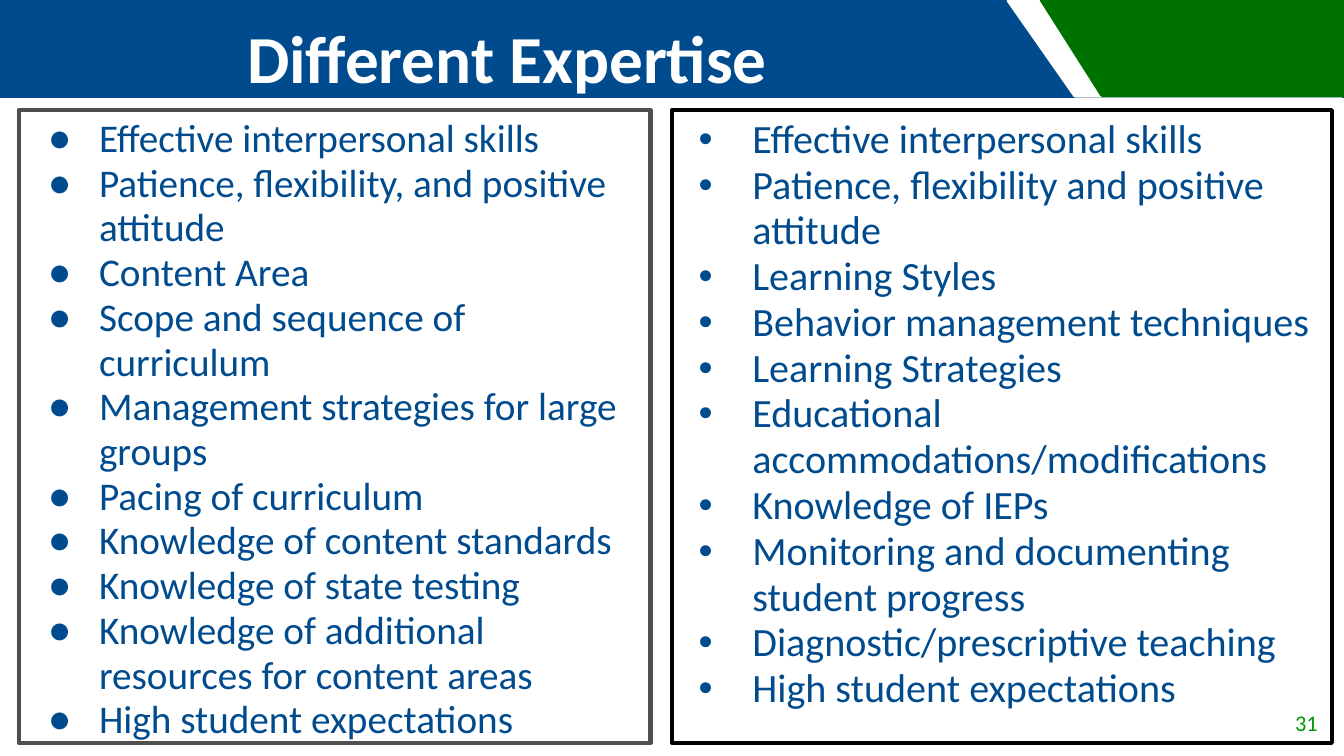
from lxml import etree
from pptx import Presentation
from pptx.dml.color import RGBColor
from pptx.enum.shapes import MSO_SHAPE
from pptx.enum.text import MSO_ANCHOR, MSO_AUTO_SIZE, PP_ALIGN
from pptx.oxml.ns import qn
from pptx.util import Pt

RECTANGLE = MSO_SHAPE.RECTANGLE
SLANTED = MSO_SHAPE.FLOWCHART_MANUAL_INPUT
TOP, MIDDLE = MSO_ANCHOR.TOP, MSO_ANCHOR.MIDDLE
LEFT, CENTER, RIGHT = PP_ALIGN.LEFT, PP_ALIGN.CENTER, PP_ALIGN.RIGHT
NO_AUTOFIT = MSO_AUTO_SIZE.NONE

FONT = "Calibri"
BLUE, GREEN, WHITE = "004B8D", "007200", "FFFFFF"
TITLE_ONLY = 5
PANEL_TOP, PANEL_HEIGHT = 59, 339
TEXT_INDENT = 36

GENERAL_EDUCATOR = [
    "Effective interpersonal skills",
    "Patience, flexibility, and positive attitude",
    "Content Area",
    "Scope and sequence of curriculum",
    "Management strategies for large groups",
    "Pacing of curriculum",
    "Knowledge of content standards",
    "Knowledge of state testing",
    "Knowledge of additional resources for content areas",
    "High student expectations",
]
SPECIAL_EDUCATOR = [
    "Effective interpersonal skills",
    "Patience, flexibility and positive attitude",
    "Learning Styles",
    "Behavior management techniques",
    "Learning Strategies",
    "Educational accommodations/modifications",
    "Knowledge of IEPs",
    "Monitoring and documenting student progress",
    "Diagnostic/prescriptive teaching",
    "High student expectations",
]


def color(hex_value):
    return RGBColor.from_string(hex_value)


def style_frame(frame, anchor):
    frame.word_wrap = True
    frame.auto_size = NO_AUTOFIT
    frame.vertical_anchor = anchor
    frame.margin_left = frame.margin_right = Pt(7.2)
    frame.margin_top = frame.margin_bottom = Pt(3.6)


def style_paragraph(para, size, hex_value, align, bold=False):
    para.alignment = align
    for span in para.runs:
        span.font.name = FONT
        span.font.size = Pt(size)
        span.font.bold = bold
        span.font.color.rgb = color(hex_value)


def add_bar(page, kind, left, top, width, height, fill, rotation=0):
    bar = page.shapes.add_shape(kind, Pt(left), Pt(top), Pt(width), Pt(height))
    bar.shadow.inherit = False
    bar.rotation = rotation
    bar.fill.solid()
    bar.fill.fore_color.rgb = color(fill)
    if rotation:
        bar.line.color.rgb = color(fill)
        bar.line.width = Pt(2)
    else:
        bar.line.fill.background()


def add_bullet(para, symbol, hanging):
    properties = para._p.get_or_add_pPr()
    properties.set("marL", str(Pt(TEXT_INDENT)))
    properties.set("indent", str(-Pt(hanging)))
    bullet_color = etree.SubElement(properties, qn("a:buClr"))
    etree.SubElement(bullet_color, qn("a:srgbClr"), val=BLUE)
    etree.SubElement(properties, qn("a:buFont"), typeface="Arial")
    etree.SubElement(properties, qn("a:buChar"), char=symbol)


def add_panel(page, left, width, border, items, size, symbol, hanging):
    panel = page.shapes.add_shape(
        RECTANGLE, Pt(left), Pt(PANEL_TOP), Pt(width), Pt(PANEL_HEIGHT))
    panel.shadow.inherit = False
    panel.fill.background()
    panel.line.color.rgb = color(border)
    panel.line.width = Pt(2.25)
    frame = panel.text_frame
    style_frame(frame, TOP)
    frame.text = "\n".join(items)
    for para in frame.paragraphs:
        add_bullet(para, symbol, hanging)
        para.line_spacing = 0.95
        style_paragraph(para, size, BLUE, LEFT)


def add_page_number(page, number):
    box = page.shapes.add_textbox(Pt(653), Pt(376.5), Pt(60), Pt(21.5))
    style_frame(box.text_frame, MIDDLE)
    box.text_frame.text = number
    style_paragraph(box.text_frame.paragraphs[0], 12, "009900", RIGHT)


def place_title(page, text):
    title = page.shapes.title
    title.left, title.top = Pt(23.75), Pt(5)
    title.width, title.height = Pt(504), Pt(46.8)
    style_frame(title.text_frame, TOP)
    title.text_frame.text = text
    style_paragraph(title.text_frame.paragraphs[0], 36, WHITE, CENTER, bold=True)
    title.element.getparent().append(title.element)


def main():
    deck = Presentation()
    deck.slide_width, deck.slide_height = Pt(720), Pt(405)
    page = deck.slides.add_slide(deck.slide_layouts[TITLE_ONLY])

    add_bar(page, RECTANGLE, 0, 0, 720, 52.5, BLUE)
    add_bar(page, SLANTED, 604, -63.5, 51, 178.5, WHITE, rotation=270)
    add_bar(page, SLANTED, 613.5, -55.5, 51, 162, GREEN, rotation=270)
    add_page_number(page, "31")
    place_title(page, "Different Expertise ")
    add_panel(page, 360, 353.5, "000000", SPECIAL_EDUCATOR, 21.5, "•", 28.8)
    add_panel(page, 10, 338.5, "4F4F4F", GENERAL_EDUCATOR, 21, "●", 27.4)

    deck.save("out.pptx")


if __name__ == "__main__":
    main()
